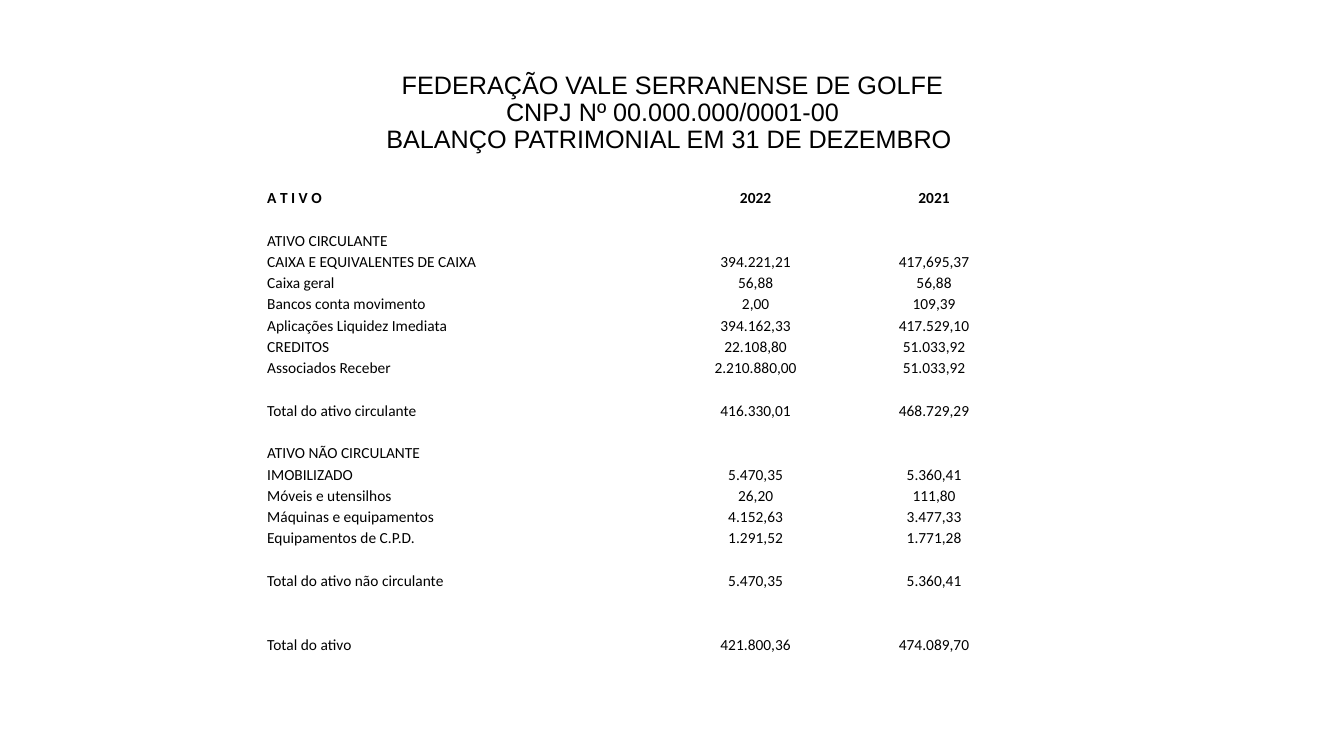
from copy import deepcopy

from lxml import etree
from pptx import Presentation
from pptx.dml.color import RGBColor
from pptx.enum import text
from pptx.oxml import ns
from pptx.util import Inches, Pt

BLACK = RGBColor(0, 0, 0)

TITLE_LINES = [
    "FEDERAÇÃO VALE SERRANENSE DE GOLFE",
    "CNPJ Nº 00.000.000/0001-00",
    "BALANÇO PATRIMONIAL EM 31 DE DEZEMBRO ",
]
COLUMN_WIDTHS = [0.99, 0.99, 1.96, 1.83, 1.71]
TABLE_HEIGHT = 4.65
LONG_LABEL = 20  # labels from this length on span three columns
BLANK = ("", "", "")
BALANCE = [
    ("A T I V O", "2022", "2021"),
    BLANK,
    ("ATIVO CIRCULANTE", "", ""),
    ("CAIXA E EQUIVALENTES DE CAIXA", "394.221,21", "417,695,37"),
    ("Caixa geral", "56,88", "56,88"),
    ("Bancos conta movimento", "2,00", "109,39"),
    ("Aplicações Liquidez Imediata", "394.162,33", "417.529,10"),
    ("CREDITOS", "22.108,80", "51.033,92"),
    ("Associados Receber", "2.210.880,00", "51.033,92"),
    BLANK,
    ("Total do ativo circulante", "416.330,01", "468.729,29"),
    BLANK,
    ("ATIVO NÃO CIRCULANTE", "", ""),
    ("IMOBILIZADO", "5.470,35", "5.360,41"),
    ("Móveis e utensilhos", "26,20", "111,80"),
    ("Máquinas e equipamentos", "4.152,63", "3.477,33"),
    ("Equipamentos de C.P.D.", "1.291,52", "1.771,28"),
    BLANK,
    ("Total do ativo não circulante", "5.470,35", "5.360,41"),
    BLANK,
    BLANK,
    ("Total do ativo", "421.800,36", "474.089,70"),
]


def set_all(target, values):
    for name, value in values.items():
        setattr(target, name, value)


def add_span(para, words, font, size, bold=False):
    span = para.add_run()
    span.text = words
    set_all(span.font, {"name": font, "size": Pt(size), "bold": bold})
    span.font.color.rgb = BLACK
    return span


def fill_title(title):
    set_all(title, {"left": Inches(0.92), "top": Inches(0.4),
                    "width": Inches(11.5), "height": Inches(1.45)})
    frame = title.text_frame
    set_all(frame, {"vertical_anchor": text.MSO_ANCHOR.MIDDLE, "word_wrap": True,
                    "auto_size": text.MSO_AUTO_SIZE.NONE})
    para = frame.paragraphs[0]
    set_all(para, {"alignment": text.PP_ALIGN.CENTER, "line_spacing": 0.9})
    for index, line in enumerate(TITLE_LINES):
        if index:
            para.add_line_break()
        span = add_span(para, line, "Arial", 18)
    # Line breaks need the run's size, or they take the layout's larger one
    for line_break in para._p.findall(ns.qn("a:br")):
        line_break.append(deepcopy(span._r.rPr))


def format_cell(cell):
    cell.fill.background()
    set_all(cell, {"vertical_anchor": text.MSO_ANCHOR.BOTTOM,
                   "margin_left": Inches(0.01), "margin_right": Inches(0.01),
                   "margin_top": Inches(0.01), "margin_bottom": 0})
    # Keeps empty cells from stretching their row
    etree.SubElement(cell.text_frame.paragraphs[0]._p,
                     ns.qn("a:endParaRPr"), sz="1100")


def write_cell(cell, words, alignment, bold):
    if words:
        para = cell.text_frame.paragraphs[0]
        para.alignment = alignment
        add_span(para, words, "Calibri", 11, bold)


def add_balance_table(page):
    frame = page.shapes.add_table(
        len(BALANCE), len(COLUMN_WIDTHS), Inches(2.64), Inches(1.85),
        Inches(sum(COLUMN_WIDTHS)), Inches(TABLE_HEIGHT))
    table = frame.table
    set_all(table, {"first_row": False, "horz_banding": False})
    for column, width in zip(table.columns, COLUMN_WIDTHS):
        column.width = Inches(width)
    for cell in table.iter_cells():
        format_cell(cell)
    for row, (label, *amounts) in enumerate(BALANCE):
        heading = row == 0
        if label and not heading:
            last = 2 if len(label) >= LONG_LABEL else 1
            table.cell(row, 0).merge(table.cell(row, last))
        write_cell(table.cell(row, 0), label, text.PP_ALIGN.LEFT, heading)
        for column, amount in enumerate(amounts, start=3):
            write_cell(table.cell(row, column), amount,
                       text.PP_ALIGN.CENTER, heading)


def main():
    deck = Presentation()
    set_all(deck, {"slide_width": Inches(13.33), "slide_height": Inches(7.5)})
    page = deck.slides.add_slide(deck.slide_layouts.get_by_name("Title Only"))
    fill_title(page.shapes.title)
    add_balance_table(page)
    deck.save("out.pptx")


if __name__ == "__main__":
    main()
